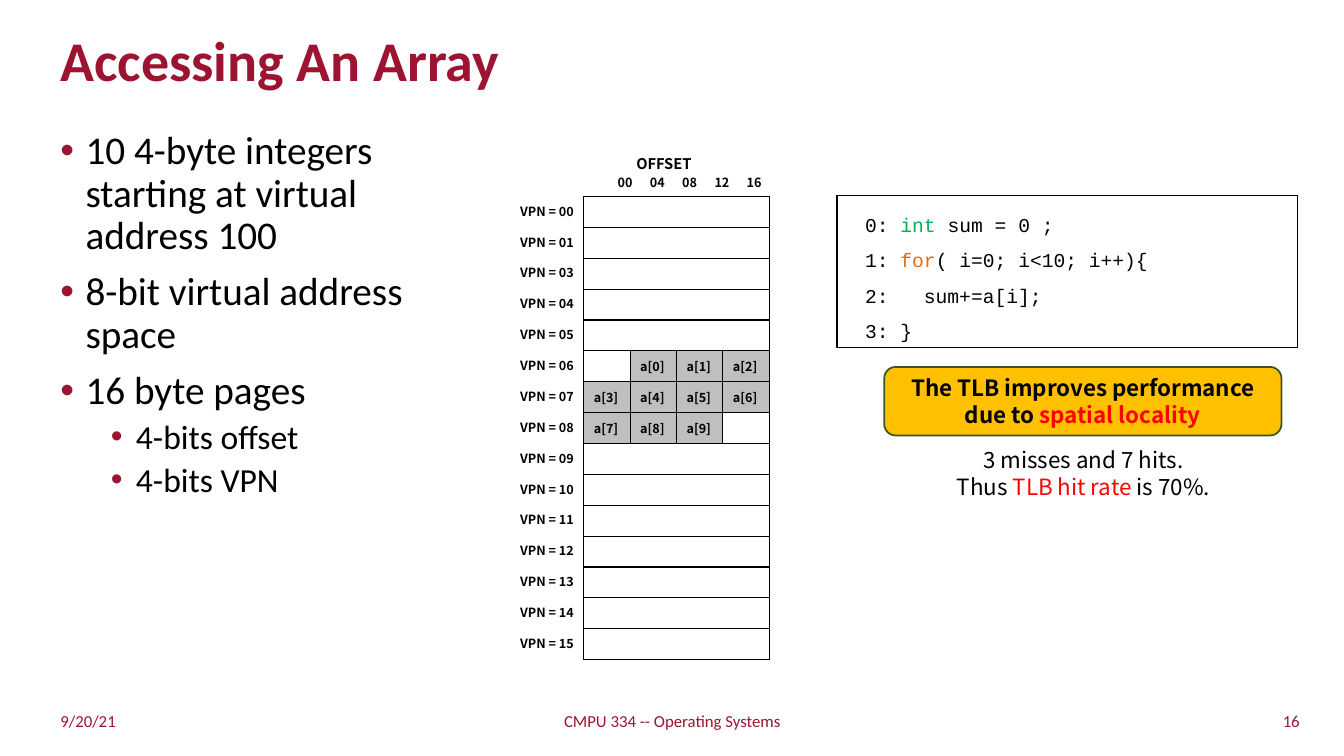
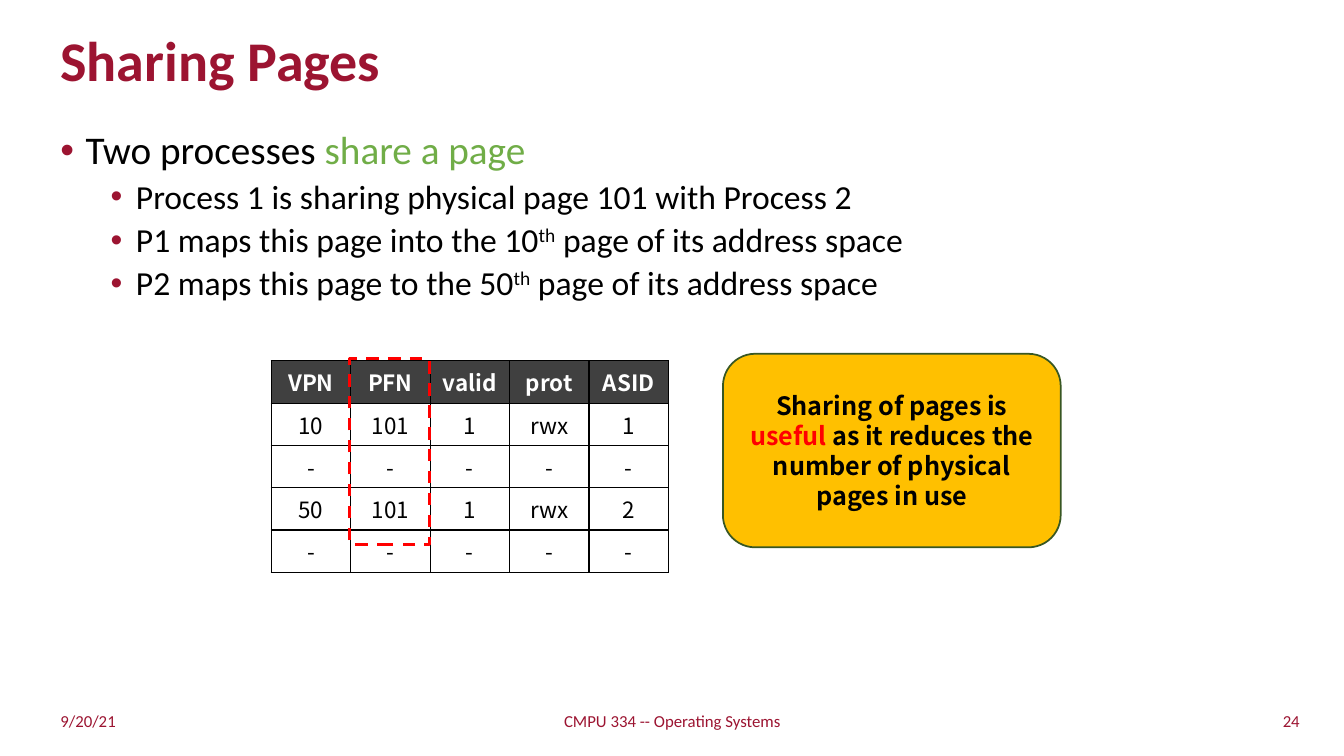
"""Build two operating systems slides on array access and page sharing."""
from lxml.etree import SubElement
from pptx import Presentation
from pptx.dml.color import RGBColor
from pptx.enum.dml import MSO_LINE
from pptx.enum.shapes import MSO_SHAPE
from pptx.enum.text import MSO_ANCHOR, PP_ALIGN
from pptx.oxml.ns import qn
from pptx.util import Inches, Pt

CRIMSON = RGBColor(0x9C, 0x14, 0x31)
BLACK = RGBColor(0, 0, 0)
WHITE = RGBColor(0xFF, 0xFF, 0xFF)
RED = RGBColor(0xFF, 0, 0)
GREEN = RGBColor(0x70, 0xAD, 0x47)
TYPE_GREEN = RGBColor(0, 0xB0, 0x50)
KEYWORD_ORANGE = RGBColor(0xE4, 0x6C, 0x0A)
AMBER = RGBColor(0xFF, 0xC0, 0)
DARK_GREEN = RGBColor(0x38, 0x57, 0x23)
LIGHT_GRAY = RGBColor(0xBF, 0xBF, 0xBF)
DARK_GRAY = RGBColor(0x40, 0x40, 0x40)
BODY_FONT = "Calibri"
FIGURE_FONT = "Noto Sans CJK KR"
CODE_FONT = "Courier New"
PLAIN_TABLE = "{2D5ABB26-0587-4C30-8999-92F81FD0307C}"

CENTERED = {"alignment": PP_ALIGN.CENTER}
RIGHT = {"alignment": PP_ALIGN.RIGHT}
LEFT = {"alignment": PP_ALIGN.LEFT}
SMALL_BOLD = {"name": FIGURE_FONT, "size": Pt(9), "bold": True}
FIGURE_TEXT = {"name": FIGURE_FONT, "size": Pt(16), "bold": False}
CALLOUT_FRAME = {
    "word_wrap": True,
    "vertical_anchor": MSO_ANCHOR.MIDDLE,
    "margin_left": Inches(0.12),
    "margin_right": Inches(0.12),
}


def write(paragraph, pieces, layout, font):
    """Add coloured runs to a paragraph and format both."""
    for name, value in layout.items():
        setattr(paragraph, name, value)
    for text, color in pieces:
        run = paragraph.add_run()
        run.text = text
        for name, value in font.items():
            setattr(run.font, name, value)
        run.font.color.rgb = color


def draw_borders(cell):
    """Draw a thin black line on each side of a table cell."""
    properties = cell._tc.get_or_add_tcPr()
    for position, side in enumerate(("a:lnL", "a:lnR", "a:lnT", "a:lnB")):
        line = properties.makeelement(qn(side), {"w": "12700"})
        fill = SubElement(line, qn("a:solidFill"))
        SubElement(fill, qn("a:srgbClr"), {"val": str(BLACK)})
        properties.insert(position, line)


presentation = Presentation()
presentation.slide_width = Inches(13.33)
presentation.slide_height = Inches(7.5)

pages = [
    ("Accessing An Array", "16", 4.29, [
        (0, [("10 4-byte integers starting at virtual address 100", BLACK)]),
        (0, [("8-bit virtual address space", BLACK)]),
        (0, [("16 byte pages", BLACK)]),
        (1, [("4-bits offset", BLACK)]),
        (1, [("4-bits VPN", BLACK)]),
    ]),
    ("Sharing Pages", "24", 12.33, [
        (0, [("Two processes ", BLACK), ("share a page", GREEN)]),
        (1, [("Process 1 is sharing physical page 101 with Process 2", BLACK)]),
        (1, [("P1 maps this page into the 10", BLACK), ("th", BLACK),
             (" page of its address space", BLACK)]),
        (1, [("P2 maps this page to the 50", BLACK), ("th", BLACK),
             (" page of its address space", BLACK)]),
    ]),
]

slides = []
for heading, number, body_width, bullets in pages:
    slide = presentation.slides.add_slide(presentation.slide_layouts[5])
    slides.append(slide)
    title = slide.shapes.title
    title.left, title.top = Inches(0.5), Inches(0.25)
    title.width, title.height = Inches(11.45), Inches(0.75)
    title.text_frame.vertical_anchor = MSO_ANCHOR.MIDDLE
    write(title.text_frame.paragraphs[0], [(heading, CRIMSON)],
          {"alignment": PP_ALIGN.LEFT, "line_spacing": 0.9},
          {"name": BODY_FONT, "size": Pt(40), "bold": True})

    body = slide.shapes.add_textbox(Inches(0.5), Inches(1.25), Inches(body_width), Inches(5.45))
    body.text_frame.word_wrap = True
    for index, (level, pieces) in enumerate(bullets):
        paragraph = body.text_frame.paragraphs[0] if index == 0 else body.text_frame.add_paragraph()
        properties = paragraph._p.get_or_add_pPr()
        properties.set("marL", str(Inches(0.25 + 0.5 * level)))
        properties.set("indent", str(-Inches(0.25)))
        bullet_color = SubElement(properties, qn("a:buClr"))
        SubElement(bullet_color, qn("a:srgbClr"), {"val": str(CRIMSON)})
        SubElement(properties, qn("a:buFont"), {"typeface": "Arial"})
        SubElement(properties, qn("a:buChar"), {"char": "•"})
        space_before = Pt(0 if index == 0 else 10 - 5 * level)
        write(paragraph, pieces,
              {"level": level, "line_spacing": 0.9, "space_before": space_before},
              {"name": BODY_FONT, "size": Pt(28 - 4 * level)})
        for run in paragraph.runs:
            if run.text == "th":
                run._r.get_or_add_rPr().set("baseline", "30000")

    for left, width, text, layout in [
        (0.5, 3.76, "9/20/21", LEFT),
        (4.42, 4.5, "CMPU 334 -- Operating Systems", CENTERED),
        (9.23, 3.76, number, RIGHT),
    ]:
        footer = slide.shapes.add_textbox(Inches(left), Inches(6.95), Inches(width), Inches(0.4))
        footer.text_frame.word_wrap = True
        footer.text_frame.vertical_anchor = MSO_ANCHOR.MIDDLE
        write(footer.text_frame.paragraphs[0], [(text, CRIMSON)], layout,
              {"name": BODY_FONT, "size": Pt(12)})

array_slide, sharing_slide = slides

page_numbers = ["00", "01", *(f"{page:02}" for page in range(3, 16))]
array_rows = {
    "06": ["", "a[0]", "a[1]", "a[2]"],
    "07": ["a[3]", "a[4]", "a[5]", "a[6]"],
    "08": ["a[7]", "a[8]", "a[9]", ""],
}
memory_frame = array_slide.shapes.add_table(
    len(page_numbers) + 1, 5, Inches(4.97), Inches(1.46), Inches(2.68), Inches(5.09))
memory_frame.element.find(".//" + qn("a:tableStyleId")).text = PLAIN_TABLE
memory = memory_frame.table
memory.first_row = memory.horz_banding = False
for index, column in enumerate(memory.columns):
    column.width = Inches(0.82 if index == 0 else 0.46)
for index, row in enumerate(memory.rows):
    row.height = Inches(0.49) if index == 0 else Inches(4.6) // len(page_numbers)

header = memory.cell(0, 0)
header.merge(memory.cell(0, 4))
header.margin_right = 0
offset_title = header.text_frame.paragraphs[0]
offset_title._p.get_or_add_pPr().set("marL", str(Inches(0.47)))
write(offset_title, [("OFFSET", BLACK)], CENTERED, {**SMALL_BOLD, "size": Pt(10.5)})
offsets = header.text_frame.add_paragraph()
tabs = SubElement(offsets._p.get_or_add_pPr(), qn("a:tabLst"))
for index in range(5):
    SubElement(tabs, qn("a:tab"), {"pos": str(Inches(1.13 + 0.32 * index)), "algn": "ctr"})
write(offsets, [("\t00\t04\t08\t12\t16", BLACK)], LEFT, SMALL_BOLD)

for row, page_number in enumerate(page_numbers, start=1):
    label = memory.cell(row, 0)
    write(label.text_frame.paragraphs[0], [(f"VPN = {page_number}", BLACK)], RIGHT, SMALL_BOLD)
    elements = array_rows.get(page_number)
    if elements is None:
        memory.cell(row, 1).merge(memory.cell(row, 4))
    for column, element in enumerate(elements or [""] * 4, start=1):
        cell = memory.cell(row, column)
        if element:
            cell.fill.solid()
            cell.fill.fore_color.rgb = LIGHT_GRAY
            cell.vertical_anchor = MSO_ANCHOR.MIDDLE
            write(cell.text_frame.paragraphs[0], [(element, BLACK)], LEFT, SMALL_BOLD)
        else:
            cell.text_frame.paragraphs[0].font.size = Pt(9)
        draw_borders(cell)

entries = [
    ["VPN", "PFN", "valid", "prot", "ASID"],
    ["10", "101", "1", "rwx", "1"],
    ["-"] * 5,
    ["50", "101", "1", "rwx", "2"],
    ["-"] * 5,
]
sharing_frame = sharing_slide.shapes.add_table(
    5, 5, Inches(2.69), Inches(3.58), Inches(3.94), Inches(2.1))
sharing_frame.element.find(".//" + qn("a:tableStyleId")).text = PLAIN_TABLE
for row, values in enumerate(entries):
    for column, value in enumerate(values):
        cell = sharing_frame.table.cell(row, column)
        is_header = row == 0
        if is_header:
            cell.fill.solid()
            cell.fill.fore_color.rgb = DARK_GRAY
        write(cell.text_frame.paragraphs[0], [(value, WHITE if is_header else BLACK)],
              CENTERED, {**FIGURE_TEXT, "bold": is_header})
        draw_borders(cell)

boxes = [
    (array_slide, MSO_SHAPE.RECTANGLE, (8.3, 1.94, 4.57, 1.51), WHITE, BLACK, 1,
     {**CALLOUT_FRAME, "margin_left": Inches(0.28), "margin_right": Inches(0.1)},
     {"alignment": PP_ALIGN.LEFT, "line_spacing": 1.5}, {"name": CODE_FONT, "size": Pt(14)}, [
         [("0: ", BLACK), ("int ", TYPE_GREEN), ("sum = 0 ;", BLACK)],
         [("1: ", BLACK), ("for", KEYWORD_ORANGE), ("( i=0; i<10; i++){", BLACK)],
         [("2:   sum+=a[i];", BLACK)],
         [("3: }", BLACK)],
     ]),
    (array_slide, MSO_SHAPE.ROUNDED_RECTANGLE, (9.29, 4.35, 2.91, 0.68), None, None, 0,
     CALLOUT_FRAME, CENTERED, FIGURE_TEXT, [
         [("3 misses and 7 hits.", BLACK)],
         [("Thus ", BLACK), ("TLB hit rate ", RED), ("is 70%.", BLACK)],
     ]),
    (array_slide, MSO_SHAPE.ROUNDED_RECTANGLE, (8.77, 3.64, 3.94, 0.68), AMBER, DARK_GREEN, 1.25,
     CALLOUT_FRAME, CENTERED, {**FIGURE_TEXT, "bold": True}, [
         [("The TLB improves performance", BLACK)],
         [("due to ", BLACK), ("spatial locality", RED)],
     ]),
    (sharing_slide, MSO_SHAPE.RECTANGLE, (3.47, 3.56, 0.79, 1.84), None, RED, 2.25,
     {}, {}, {}, []),
    (sharing_slide, MSO_SHAPE.ROUNDED_RECTANGLE, (7.17, 3.51, 3.35, 1.92), AMBER, DARK_GREEN, 1.25,
     CALLOUT_FRAME, CENTERED, {**FIGURE_TEXT, "size": Pt(18), "bold": True}, [
         [("Sharing of pages is ", BLACK), ("useful", RED),
          (" as it reduces the number of physical pages in use", BLACK)],
     ]),
]
for slide, kind, place, fill, outline, weight, frame_format, layout, font, lines in boxes:
    shape = slide.shapes.add_shape(kind, *(Inches(length) for length in place))
    shape.shadow.inherit = False
    if fill is None:
        shape.fill.background()
    else:
        shape.fill.solid()
        shape.fill.fore_color.rgb = fill
    if outline is None:
        shape.line.fill.background()
    else:
        shape.line.color.rgb = outline
        shape.line.width = Pt(weight)
    if not lines:
        shape.line.dash_style = MSO_LINE.DASH
    for name, value in frame_format.items():
        setattr(shape.text_frame, name, value)
    for index, pieces in enumerate(lines):
        paragraph = shape.text_frame.paragraphs[0] if index == 0 else shape.text_frame.add_paragraph()
        write(paragraph, pieces, layout, font)

presentation.save("out.pptx")
